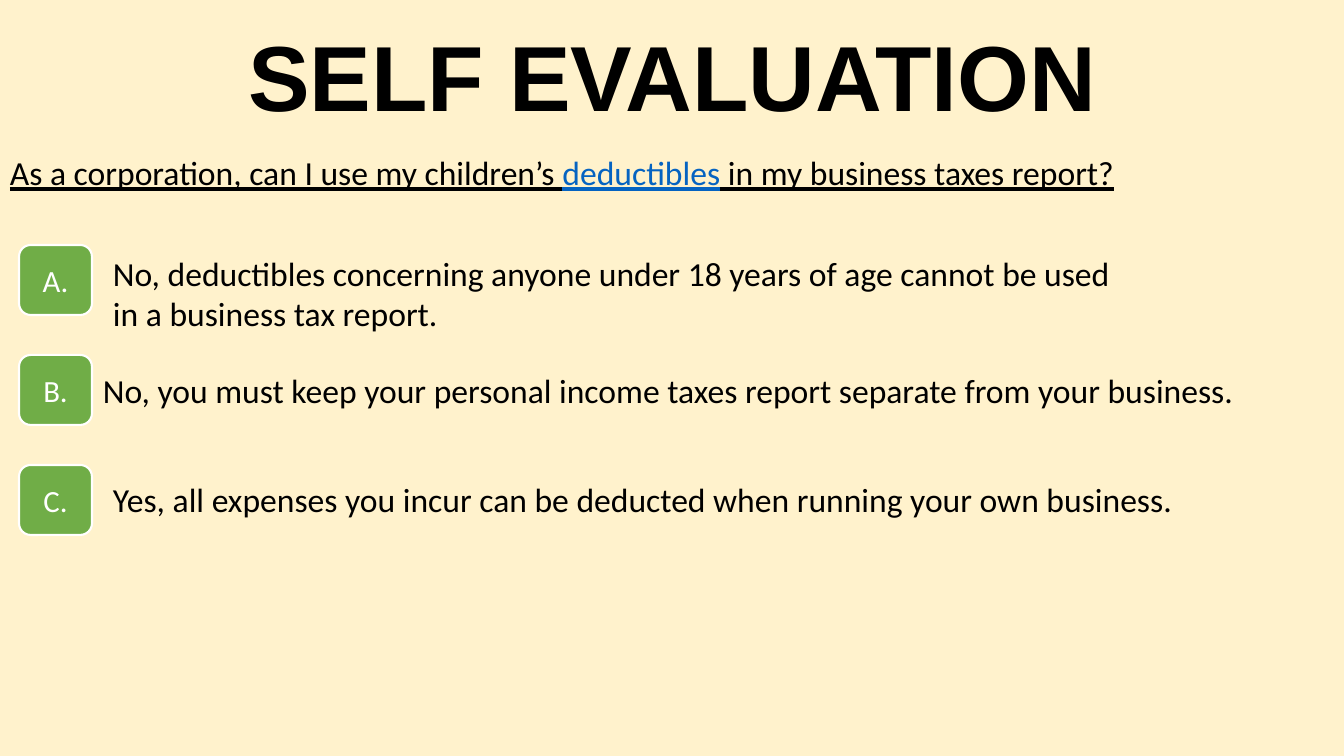
"""Builds the self evaluation quiz slide."""
import pptx
import pptx.dml.color
import pptx.enum.shapes
import pptx.enum.text
import pptx.util

EMU_PER_PX = 914400 / 100.8
BLACK = "000000"
WHITE = "FFFFFF"
CREAM = "FFF2CC"
GREEN = "70AD47"
LINK_BLUE = "0563C1"

BADGE_TOP, BADGE_STEP = 245, 110
QUESTION = [
    ("As a corporation, can I use my children’s ", BLACK),
    ("deductibles", LINK_BLUE),
    (" in my business taxes report?", BLACK),
]
ANSWERS = [
    ("A.", "No, deductibles concerning anyone under 18 years of age cannot be used "
     "in a business tax report.", (103, 248, 1049, 92)),
    ("B.", "No, you must keep your personal income taxes report separate from "
     "your business.", (93, 365, 1232, 50)),
    ("C.", "Yes, all expenses you incur can be deducted when running your own "
     "business.", (103, 474, 1201, 50)),
]


def px(length):
    """Turn pixels into EMU."""
    return pptx.util.Emu(round(length * EMU_PER_PX))


def color(hex_code):
    """Turn a hex string into a colour."""
    return pptx.dml.color.RGBColor.from_string(hex_code)


def style(font, size, hex_code, name="Calibri"):
    """Set the typeface, size and colour of a font."""
    font.name = name
    font.size = pptx.util.Pt(size)
    font.color.rgb = color(hex_code)


def set_title(slide, wording):
    """Place and format the slide title."""
    title = slide.shapes.title
    title.left, title.top, title.width, title.height = map(px, (93, 9, 1159, 146))
    title.text_frame.text = wording
    title.text_frame.vertical_anchor = pptx.enum.text.MSO_ANCHOR.MIDDLE
    heading = title.text_frame.paragraphs[0]
    heading.alignment = pptx.enum.text.PP_ALIGN.CENTER
    heading.line_spacing = 0.9
    style(heading.font, 66, BLACK, "Arial")
    heading.font.bold = True


def add_text(slide, box, pieces, underline=False):
    """Add a wrapped line of text made of coloured pieces."""
    frame = slide.shapes.add_textbox(*map(px, box)).text_frame
    frame.word_wrap = True
    frame.auto_size = pptx.enum.text.MSO_AUTO_SIZE.SHAPE_TO_FIT_TEXT
    sentence = frame.paragraphs[0]
    style(sentence.font, 24, BLACK)
    sentence.font.underline = underline
    for wording, hex_code in pieces:
        run = sentence.add_run()
        run.text = wording
        style(run.font, 24, hex_code)
        run.font.underline = underline


def add_badge(slide, top, letter):
    """Add the green rounded badge of an answer."""
    badge = slide.shapes.add_shape(
        pptx.enum.shapes.MSO_SHAPE.ROUNDED_RECTANGLE, *map(px, (19, top, 73, 70)))
    badge.shadow.inherit = False
    badge.fill.solid()
    badge.fill.fore_color.rgb = color(GREEN)
    badge.line.color.rgb = color(WHITE)
    badge.line.width = pptx.util.Pt(1.5)
    badge.text_frame.text = letter
    badge.text_frame.vertical_anchor = pptx.enum.text.MSO_ANCHOR.MIDDLE
    label = badge.text_frame.paragraphs[0]
    label.alignment = pptx.enum.text.PP_ALIGN.CENTER
    style(label.font, 22, WHITE)


def main():
    """Build and save the slide."""
    deck = pptx.Presentation()
    deck.slide_width, deck.slide_height = px(1344), px(756)
    slide = deck.slides.add_slide(deck.slide_layouts[5])
    slide.background.fill.solid()
    slide.background.fill.fore_color.rgb = color(CREAM)

    set_title(slide, "SELF EVALUATION")
    add_text(slide, (0, 147, 1342, 50), QUESTION, underline=True)
    for row, (letter, answer, box) in enumerate(ANSWERS):
        add_badge(slide, BADGE_TOP + row * BADGE_STEP, letter)
        add_text(slide, box, [(answer, BLACK)])
    deck.save("out.pptx")


if __name__ == "__main__":
    main()
